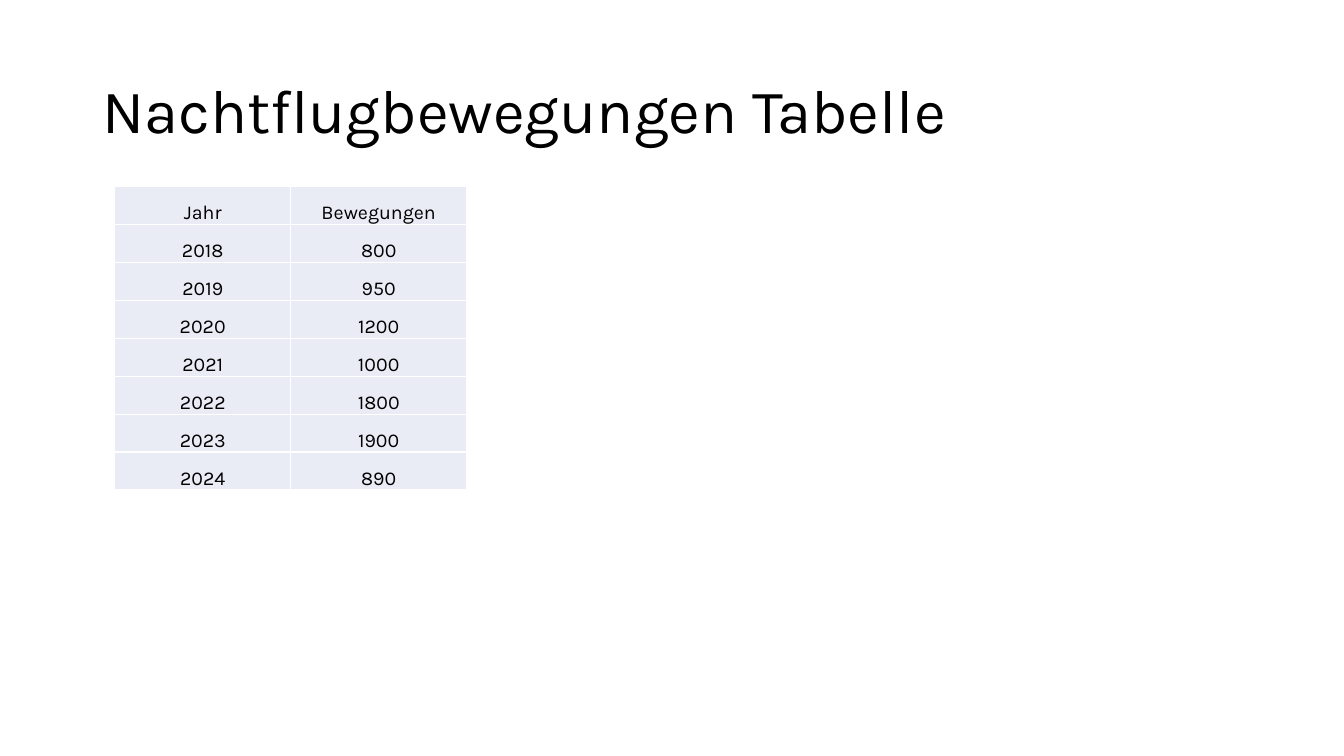
from lxml.etree import SubElement
from pptx import Presentation
from pptx.dml.color import RGBColor
from pptx.enum.text import MSO_ANCHOR, PP_ALIGN
from pptx.oxml.ns import qn
from pptx.util import Pt

FONT = "Karla"
BLACK, WHITE, PALE_BLUE = "000000", "FFFFFF", "E9EBF5"
NIGHT_FLIGHTS = [
    ("Jahr", "Bewegungen"),
    ("2018", "800"),
    ("2019", "950"),
    ("2020", "1200"),
    ("2021", "1000"),
    ("2022", "1800"),
    ("2023", "1900"),
    ("2024", "890"),
]


def color(hex_code):
    return RGBColor.from_string(hex_code)


def style_font(paragraph, size):
    font = paragraph.runs[0].font
    font.name = FONT
    font.size = Pt(size)
    font.color.rgb = color(BLACK)


def add_borders(cell, hex_code, width):
    properties = cell._tc.get_or_add_tcPr()
    for side in ("lnL", "lnR", "lnT", "lnB"):
        line = SubElement(properties, qn(f"a:{side}"), w=str(Pt(width)))
        fill = SubElement(line, qn("a:solidFill"))
        SubElement(fill, qn("a:srgbClr"), val=hex_code)


def add_heading(slide, text, left, top, width, height):
    heading = slide.shapes.add_textbox(Pt(left), Pt(top), Pt(width), Pt(height))
    frame = heading.text_frame
    frame.word_wrap = True
    frame.vertical_anchor = MSO_ANCHOR.MIDDLE
    frame.text = text
    frame.paragraphs[0].line_spacing = 0.9
    style_font(frame.paragraphs[0], 44)


def add_flight_table(slide, rows, left, top, width, height):
    flights = slide.shapes.add_table(
        len(rows), len(rows[0]), Pt(left), Pt(top), Pt(width), Pt(height)
    ).table
    flights.first_row = False
    flights.horz_banding = False

    # Equal rows and columns
    for row in flights.rows:
        row.height = Pt(height / len(rows))
    for column in flights.columns:
        column.width = Pt(width / len(rows[0]))

    # Cell contents and look
    for row_index, values in enumerate(rows):
        for column_index, value in enumerate(values):
            cell = flights.cell(row_index, column_index)
            cell.margin_left = cell.margin_right = cell.margin_top = Pt(0.7)
            cell.margin_bottom = Pt(0)
            cell.vertical_anchor = MSO_ANCHOR.BOTTOM
            add_borders(cell, WHITE, 1)
            cell.fill.solid()
            cell.fill.fore_color.rgb = color(PALE_BLUE)
            cell.text = value
            paragraph = cell.text_frame.paragraphs[0]
            paragraph.alignment = PP_ALIGN.CENTER
            style_font(paragraph, 14)


def main():
    presentation = Presentation()
    presentation.slide_width, presentation.slide_height = Pt(960), Pt(540)
    slide = presentation.slides.add_slide(presentation.slide_layouts[6])
    add_heading(slide, "Nachtflugbewegungen Tabelle", 66, 28.75, 828, 104.4)
    add_flight_table(slide, NIGHT_FLIGHTS, 82, 133.2, 251.4, 216.8)
    presentation.save("out.pptx")


if __name__ == "__main__":
    main()
